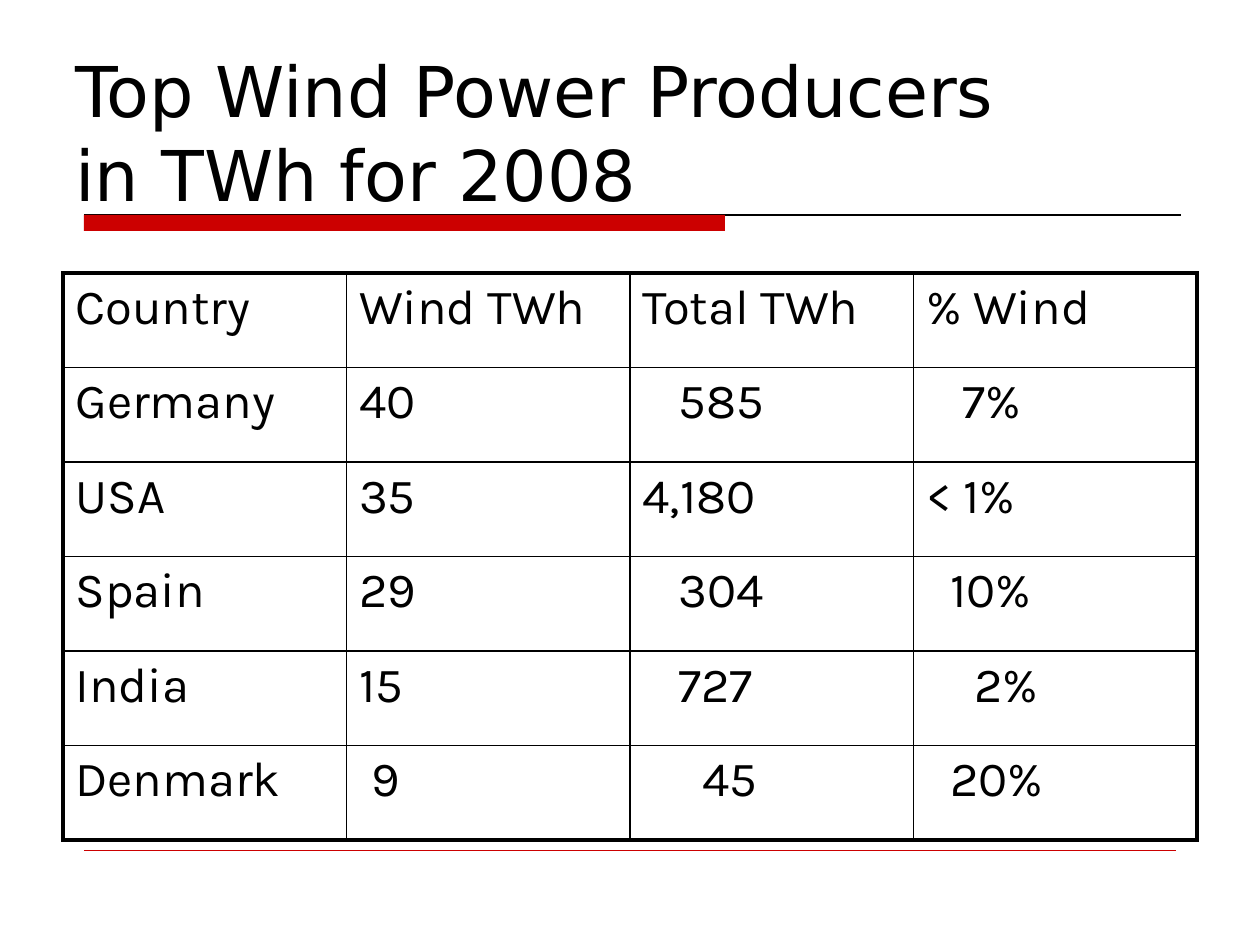
import pptx
import pptx.dml.color
import pptx.enum.shapes
import pptx.enum.text
import pptx.oxml
import pptx.oxml.ns
import pptx.util
from lxml import etree

BLACK, RED = "000000", "CC0000"
TITLE_FONT, BODY_FONT = "DejaVu Sans", "Karla"
SPACE = 12  # px, one indent step in the table
HEADER = ["Country", "Wind TWh", "Total TWh", "% Wind"]
# Each figure is given with its indent in steps.
ROWS = [
    ["Germany", ("40", 0), ("585", 3), ("7%", 3)],
    ["USA", ("35", 0), ("4,180", 0), ("< 1%", 0)],
    ["Spain", ("29", 0), ("304", 3), ("10%", 2)],
    ["India", ("15", 0), ("727", 3), ("2%", 4)],
    ["Denmark", ("9", 1), ("45", 5), ("20%", 2)],
]


def px(n):
    return pptx.util.Emu(round(n * 914400 / 126))


def rgb(color):
    return pptx.dml.color.RGBColor.from_string(color)


def set_font(p, name, size):
    p.font.name = name
    p.font.size = pptx.util.Pt(size)
    p.font.color.rgb = rgb(BLACK)


def add_rule(slide, x, y, w, color, width):
    line = slide.shapes.add_connector(
        pptx.enum.shapes.MSO_CONNECTOR.STRAIGHT, px(x), px(y), px(x + w), px(y))
    line.line.color.rgb = rgb(color)
    line.line.width = pptx.util.Pt(width)
    etree.SubElement(line._element.spPr, pptx.oxml.ns.qn("a:effectLst"))


def add_title(slide, text, x, y, w, h):
    title = slide.shapes.title
    title.left, title.top, title.width, title.height = px(x), px(y), px(w), px(h)
    tf = title.text_frame
    tf.word_wrap = True
    tf.auto_size = pptx.enum.text.MSO_AUTO_SIZE.NONE
    tf.vertical_anchor = pptx.enum.text.MSO_ANCHOR.BOTTOM
    tf.text = text
    p = tf.paragraphs[0]
    p.alignment = pptx.enum.text.PP_ALIGN.LEFT
    set_font(p, TITLE_FONT, 40)


def add_title_bar(slide, x, y, w, h, bar_w):
    """Thick red bar under the title, with a thin rule along its top."""
    add_rule(slide, x, y, w, BLACK, 0.75)
    bar = slide.shapes.add_shape(
        pptx.enum.shapes.MSO_SHAPE.RECTANGLE, px(x), px(y), px(bar_w), px(h))
    bar.shadow.inherit = False
    bar.fill.solid()
    bar.fill.fore_color.rgb = rgb(RED)
    bar.line.fill.background()


def set_borders(cell, widths):
    """Set the left, right, top and bottom border widths in points."""
    tc_pr = cell._tc.get_or_add_tcPr()
    for i, (side, width) in enumerate(zip("LRTB", widths)):
        tc_pr.insert(i, pptx.oxml.parse_xml(
            f'<a:ln{side} {pptx.oxml.ns.nsdecls("a")} w="{pptx.util.Pt(width)}">'
            f'<a:solidFill><a:srgbClr val="{BLACK}"/></a:solidFill></a:ln{side}>'))


def add_data_table(slide, header, rows, x, y, w, h):
    n_rows, n_cols = len(rows) + 1, len(header)
    table = slide.shapes.add_table(n_rows, n_cols, px(x), px(y), px(w), px(h)).table
    table.first_row = table.horz_banding = False
    for column in table.columns:
        column.width = px(w / n_cols)
    for row in table.rows:
        row.height = px(h / n_rows)
    for i, values in enumerate([header] + rows):
        for j, value in enumerate(values):
            text, steps = (value, 0) if isinstance(value, str) else value
            cell = table.cell(i, j)
            cell.fill.background()
            cell.text = text
            p = cell.text_frame.paragraphs[0]
            if steps:
                p._p.get_or_add_pPr().set("marL", str(px(steps * SPACE)))
            set_font(p, BODY_FONT, 28)
            edges = (j == 0, j == n_cols - 1, i == 0, i == n_rows - 1)
            set_borders(cell, [2.25 if edge else 1 for edge in edges])


def main():
    prs = pptx.Presentation()
    prs.slide_width, prs.slide_height = px(1260), px(945)
    slide = prs.slides.add_slide(prs.slide_layouts[5])
    add_title_bar(slide, 84, 215, 1097, 16, bar_w=641)
    add_rule(slide, 84, 850, 1092, RED, 0.25)
    add_title(slide, "Top Wind Power Producers\vin TWh for 2008", 63, 53, 1134, 169)
    add_data_table(slide, HEADER, ROWS, 63, 273, 1134, 567)
    prs.save("out.pptx")


if __name__ == "__main__":
    main()
